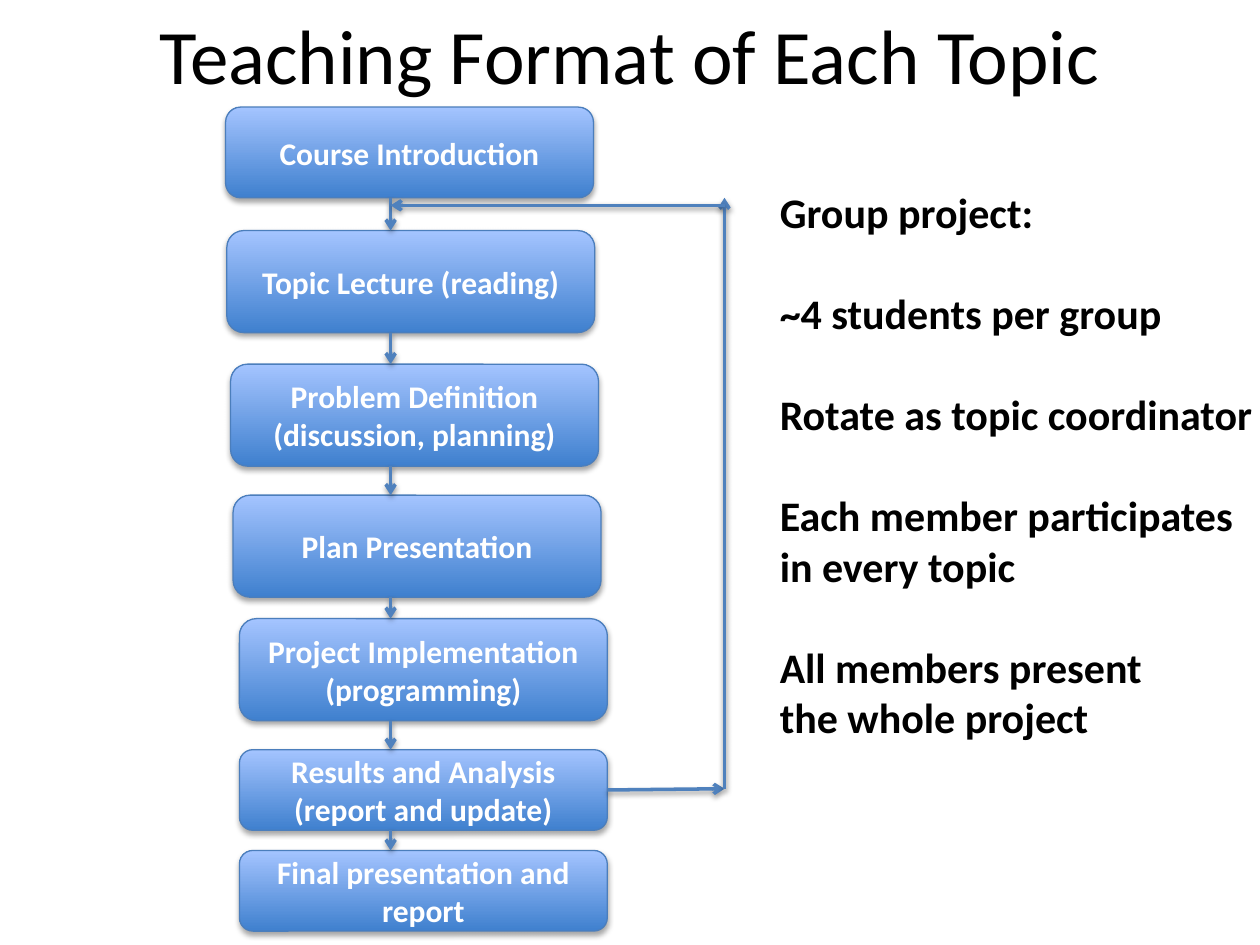
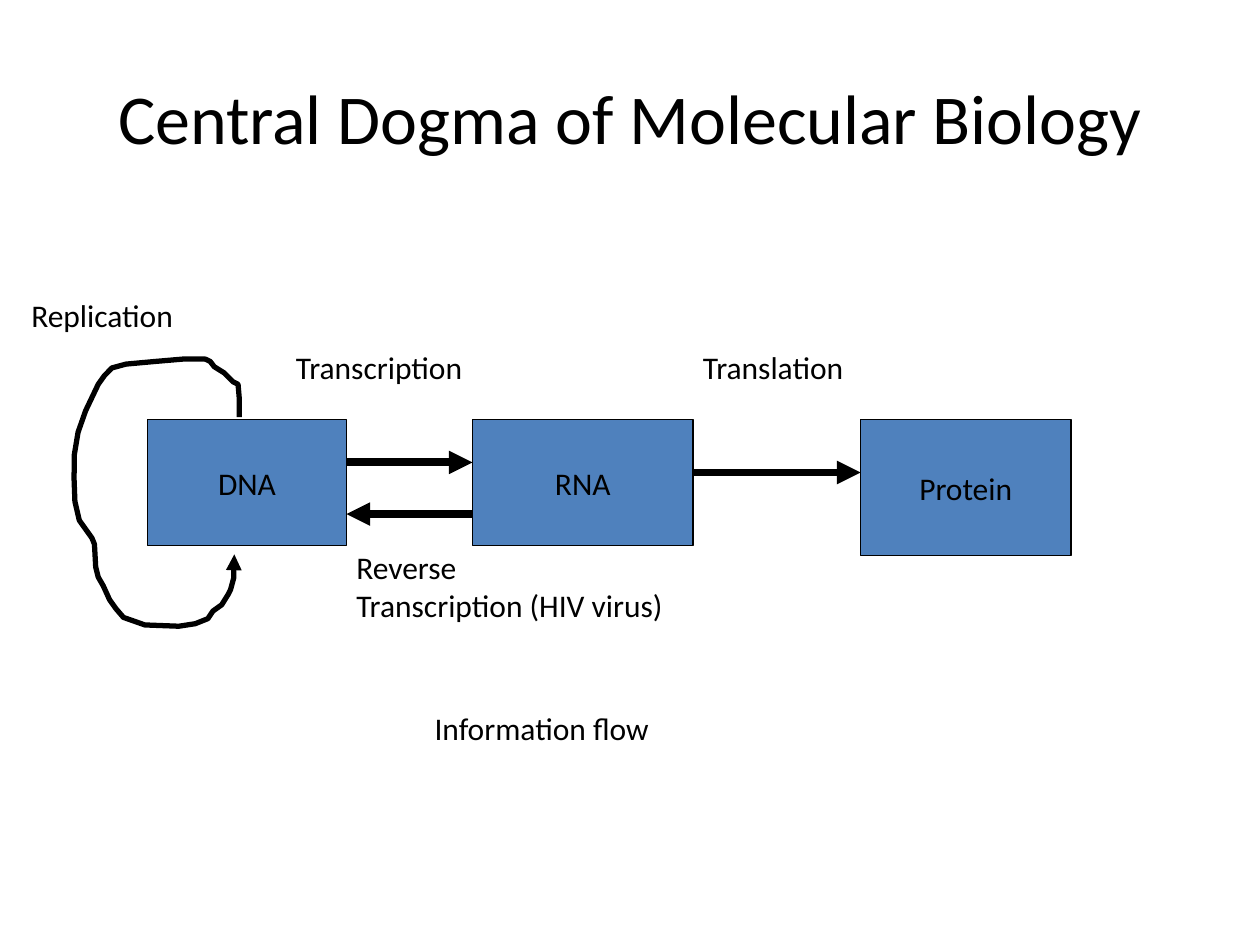
"""Build two slides: the teaching format of each topic and the central dogma."""
import itertools
from typing import NamedTuple, Optional

import pptx
import pptx.dml.color
import pptx.enum.shapes
import pptx.enum.text
import pptx.oxml.ns
import pptx.util
from lxml import etree

RGBColor = pptx.dml.color.RGBColor
SHAPE = pptx.enum.shapes.MSO_SHAPE
ALIGN = pptx.enum.text.PP_ALIGN
ANCHOR = pptx.enum.text.MSO_ANCHOR
qn = pptx.oxml.ns.qn

BLACK = RGBColor(0x00, 0x00, 0x00)
WHITE = RGBColor(0xFF, 0xFF, 0xFF)
BLUE = RGBColor(0x4F, 0x81, 0xBD)
STEP_EDGE = RGBColor(0x4B, 0x7E, 0xBC)
STEP_BOTTOM = RGBColor(0x3F, 0x80, 0xCE)
STEP_TOP = RGBColor(0xA4, 0xC4, 0xFF)
FONT = "Calibri"

SLIDE_WIDTH = pptx.util.Inches(10)
SLIDE_HEIGHT = pptx.util.Inches(7.5)
COLUMN = SLIDE_WIDTH / 100
ROW = SLIDE_HEIGHT / 75


class Area(NamedTuple):
    """A rectangle in grid columns and rows."""
    left: float
    top: float
    width: float
    height: float

    @property
    def bottom(self) -> float:
        """Return the row of the lower edge."""
        return self.top + self.height

    @property
    def right(self) -> float:
        """Return the column of the right edge."""
        return self.left + self.width

    def emu(self) -> list[int]:
        """Return the rectangle in slide units."""
        return [round(self.left * COLUMN), round(self.top * ROW),
                round(self.width * COLUMN), round(self.height * ROW)]


class TextStyle(NamedTuple):
    """The look of a piece of text."""
    size: float
    color: RGBColor = BLACK
    bold: bool = False
    align: ALIGN = ALIGN.LEFT
    anchor: ANCHOR = ANCHOR.TOP


class ArrowStyle(NamedTuple):
    """The look of a line with an arrowhead."""
    color: RGBColor
    width: float
    head: str
    shadow_alpha: int = 0


class Block(NamedTuple):
    """A labelled area on a slide."""
    label: str
    area: Area


STEP_TEXT = TextStyle(18, WHITE, True, ALIGN.CENTER, ANCHOR.MIDDLE)
MOLECULE_TEXT = TextStyle(18, BLACK, False, ALIGN.CENTER, ANCHOR.MIDDLE)
LABEL_TEXT = TextStyle(18)
NOTE_TEXT = TextStyle(24, BLACK, True)
NOTE_GAP = 29

FLOW_ARROW = ArrowStyle(BLUE, 2, "arrow", 38)
PROCESS_ARROW = ArrowStyle(BLACK, 4.5, "triangle")
LOOP_ARROW = ArrowStyle(BLACK, 3, "triangle")

STEP_WIDTH = 29.2
STEPS = [Block(label, Area(left, top, STEP_WIDTH, height)) for label, left, top, height in (
    ("Course Introduction", 17.9, 8.5, 7.2),
    ("Topic Lecture (reading)", 18, 18.3, 8.1),
    ("Problem Definition (discussion, planning)", 18.3, 28.9, 8.1),
    ("Plan Presentation", 18.5, 39.3, 8.1),
    ("Project Implementation (programming)", 19, 49.1, 8.1),
    ("Results and Analysis (report and update)", 19, 59.5, 6.4),
    ("Final presentation and report", 19, 67.5, 6.4),
)]
FLOW_COLUMN = 31
RETURN_COLUMN = 57.5
RETURN_START_ROW = 62.6
RETURN_END_ROW = 16.3

GROUP_RULES = (
    ("Group project:",),
    ("~4 students per group",),
    ("Rotate as topic coordinator",),
    ("Each member participates", "in every topic"),
    ("All members present", "the whole project"),
)

DNA = Block("DNA", Area(11.7, 33.3, 15.8, 10))
RNA = Block("RNA", Area(37.5, 33.3, 17.5, 10))
PROTEIN = Block("Protein", Area(68.3, 33.3, 16.7, 10.8))
PROCESS_LABELS = (
    Block("Transcription", Area(22.5, 27.1, 19.9, 5)),
    Block("Information flow", Area(33.5, 55.8, 24.9, 5)),
    Block("Translation", Area(54.8, 27.1, 17.2, 5)),
    Block("Replication", Area(1.5, 23, 17.3, 5)),
    Block("Reverse\nTranscription (HIV virus)", Area(27.3, 43, 36.4, 9)),
)
REPLICATION_LOOP = (
    (19, 33.1), (19, 31.7), (18.9, 30.5), (18.5, 30.3), (17.8, 29.6), (17, 29.1),
    (16.7, 28.7), (16.3, 28.5), (14.5, 28.5), (12.2, 28.7), (10, 28.9), (8.9, 29.2),
    (8.3, 29.8), (7.8, 30.5), (6.8, 32.6), (6.2, 34.3), (5.9, 36.1), (5.88, 38),
    (5.95, 39.8), (6.3, 41.3), (7.3, 42.7), (7.5, 43.2), (7.6, 45), (7.8, 45.8),
    (8.2, 46.5), (8.7, 47.6), (9.2, 48.3), (9.8, 49), (11.5, 49.6), (14.2, 49.7),
    (15.5, 49.5), (16.5, 49.1), (16.9, 48.5), (17.6, 48), (18.1, 47.2), (18.3, 46.8),
    (18.55, 45.9), (18.6, 44),
)


def write(shape, paragraphs: list[tuple[str, float]], style: TextStyle) -> None:
    """Fill a shape with paragraphs, each given with its space before."""
    frame = shape.text_frame
    frame.word_wrap = True
    frame.vertical_anchor = style.anchor
    for index, (text, space_before) in enumerate(paragraphs):
        paragraph = frame.add_paragraph() if index else frame.paragraphs[0]
        paragraph.alignment = style.align
        if space_before:
            paragraph.space_before = pptx.util.Pt(space_before)
        run = paragraph.add_run()
        run.text = text
        run.font.name = FONT
        run.font.size = pptx.util.Pt(style.size)
        run.font.bold = style.bold
        run.font.color.rgb = style.color


def add_text(slide, area: Area, paragraphs: list[tuple[str, float]], style: TextStyle) -> None:
    """Add a text box over an area."""
    write(slide.shapes.add_textbox(*area.emu()), paragraphs, style)


def add_title(slide, text: str, top: float, size: float) -> None:
    """Add the centred slide title."""
    style = TextStyle(size, align=ALIGN.CENTER, anchor=ANCHOR.MIDDLE)
    add_text(slide, Area(5, top, 90, 12.5), [(text, 0)], style)


def add_shadow(effects, blur: float, distance: float, alpha: int) -> None:
    """Put a soft downward shadow into an effect list."""
    shadow = etree.SubElement(
        effects, qn("a:outerShdw"), blurRad=str(pptx.util.Pt(blur)),
        dist=str(pptx.util.Pt(distance)), dir="5400000", rotWithShape="0")
    color = etree.SubElement(shadow, qn("a:srgbClr"), val=str(BLACK))
    etree.SubElement(color, qn("a:alpha"), val=str(alpha * 1000))


def add_block(slide, block: Block, preset: SHAPE, edge: RGBColor, style: TextStyle):
    """Add an outlined shape that carries its label."""
    shape = slide.shapes.add_shape(preset, *block.area.emu())
    shape.shadow.inherit = False
    shape.line.color.rgb = edge
    shape.line.width = pptx.util.Pt(0.75)
    write(shape, [(block.label, 0)], style)
    return shape


def add_step(slide, step: Block):
    """Add one shaded step of the teaching flow."""
    shape = add_block(slide, step, SHAPE.ROUNDED_RECTANGLE, STEP_EDGE, STEP_TEXT)
    shape.fill.gradient()
    shape.fill.gradient_angle = 90
    for stop, position, color in zip(shape.fill.gradient_stops, (0, 1), (STEP_BOTTOM, STEP_TOP)):
        stop.position = position
        stop.color.rgb = color
    add_shadow(shape.element.spPr.find(qn("a:effectLst")), 3.1, 1.8, 35)
    return shape


def add_molecule(slide, molecule: Block) -> None:
    """Add one flat molecule box."""
    shape = add_block(slide, molecule, SHAPE.RECTANGLE, BLACK, MOLECULE_TEXT)
    shape.fill.solid()
    shape.fill.fore_color.rgb = BLUE


def style_arrow(arrow, style: ArrowStyle) -> None:
    """Give a line its colour, width, arrowhead and shadow."""
    arrow.line.color.rgb = style.color
    arrow.line.width = pptx.util.Pt(style.width)
    properties = arrow.element.spPr
    outline = properties.find(qn("a:ln"))
    etree.SubElement(outline, qn("a:round"))
    etree.SubElement(outline, qn("a:tailEnd"), type=style.head)
    effects = etree.SubElement(properties, qn("a:effectLst"))
    if style.shadow_alpha:
        add_shadow(effects, 3.1, 1.6, style.shadow_alpha)


def add_arrow(slide, start: tuple[float, float], end: tuple[float, float],
              style: ArrowStyle, source: Optional[object] = None) -> None:
    """Add a straight arrow, joined to the right side of its source if given."""
    ends = [round(value * unit) for value, unit in zip((*start, *end), (COLUMN, ROW) * 2)]
    arrow = slide.shapes.add_connector(pptx.enum.shapes.MSO_CONNECTOR.STRAIGHT, *ends)
    if source is not None:
        arrow.begin_connect(source, 3)
    style_arrow(arrow, style)


def add_loop(slide, points: tuple[tuple[float, float], ...]) -> None:
    """Add the open replication loop."""
    corners = [(round(x * COLUMN), round(y * ROW)) for x, y in points]
    builder = slide.shapes.build_freeform(*corners[0])
    builder.add_line_segments(corners[1:], close=False)
    loop = builder.convert_to_shape()
    loop.fill.background()
    style_arrow(loop, LOOP_ARROW)


def build_teaching_format(slide) -> None:
    """Draw the teaching flow with its return path and group rules."""
    add_title(slide, "Teaching Format of Each Topic", -2, 44)
    shapes = [add_step(slide, step) for step in STEPS]
    for step, following in itertools.pairwise(STEPS):
        add_arrow(slide, (FLOW_COLUMN, step.area.bottom),
                  (FLOW_COLUMN, following.area.top), FLOW_ARROW)

    results = STEPS[-2].area
    corner = (RETURN_COLUMN, RETURN_START_ROW)
    add_arrow(slide, (results.right, results.top + results.height / 2), corner,
              FLOW_ARROW, shapes[-2])
    add_arrow(slide, corner, (RETURN_COLUMN, STEPS[0].area.bottom), FLOW_ARROW)
    add_arrow(slide, (RETURN_COLUMN, RETURN_END_ROW), (FLOW_COLUMN, RETURN_END_ROW), FLOW_ARROW)

    rules = [(line, NOTE_GAP if number and not part else 0)
             for number, rule in enumerate(GROUP_RULES) for part, line in enumerate(rule)]
    add_text(slide, Area(60.9, 14.3, 40.2, 49.5), rules, NOTE_TEXT)


def build_central_dogma(slide) -> None:
    """Draw the flow of information from DNA to protein."""
    add_title(slide, "Central Dogma of Molecular Biology", 3, 40)
    for molecule in (DNA, RNA, PROTEIN):
        add_molecule(slide, molecule)
    for source, target, row in ((DNA.area.right, RNA.area.left, 36.7),
                                (RNA.area.right, PROTEIN.area.left, 37.5),
                                (RNA.area.left, DNA.area.right, 40.8)):
        add_arrow(slide, (source, row), (target, row), PROCESS_ARROW)
    add_loop(slide, REPLICATION_LOOP)
    for label, area in PROCESS_LABELS:
        add_text(slide, area, [(line, 0) for line in label.split("\n")], LABEL_TEXT)


def main() -> None:
    """Build and save the presentation."""
    deck = pptx.Presentation()
    deck.slide_width = SLIDE_WIDTH
    deck.slide_height = SLIDE_HEIGHT
    for build in (build_teaching_format, build_central_dogma):
        build(deck.slides.add_slide(deck.slide_layouts[6]))
    deck.save("out.pptx")


if __name__ == "__main__":
    main()
